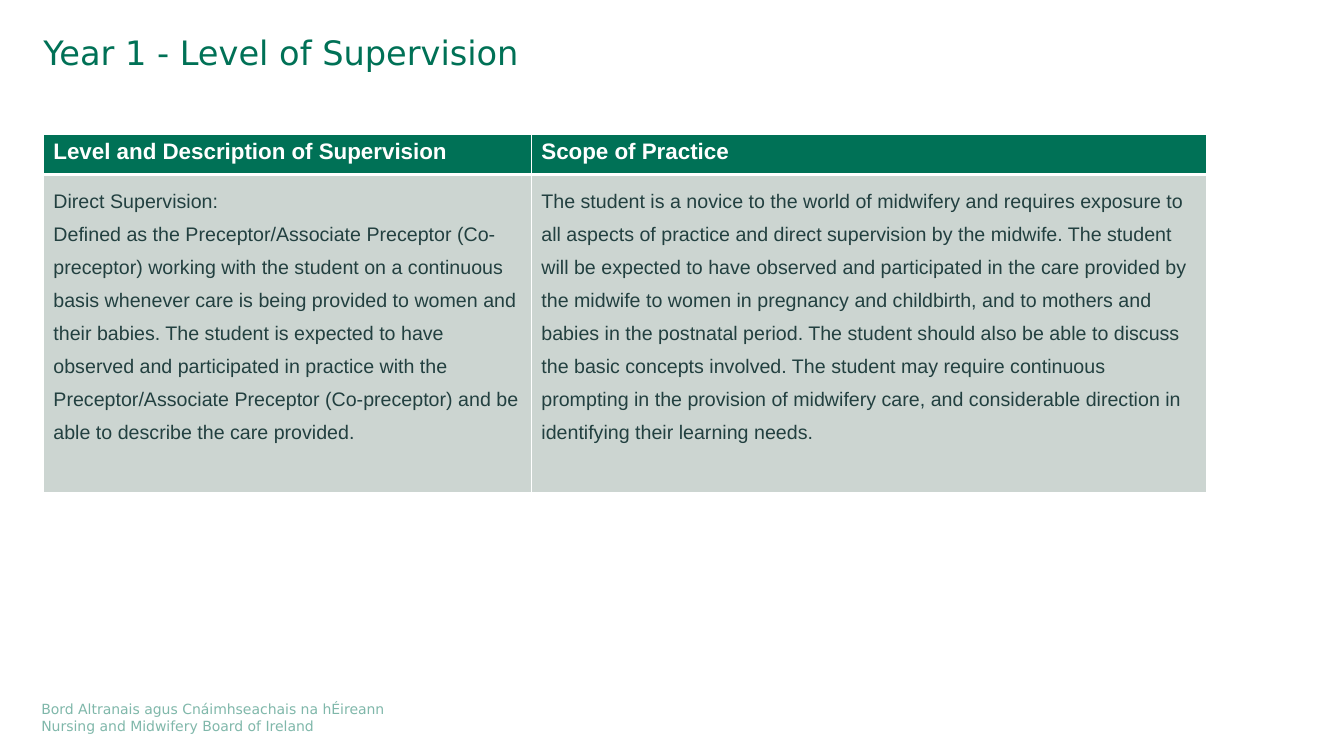
from dataclasses import dataclass

from lxml import etree
from pptx import Presentation
from pptx.dml.color import RGBColor
from pptx.enum.text import MSO_ANCHOR
from pptx.oxml.ns import qn
from pptx.slide import Slide
from pptx.table import _Cell
from pptx.text.text import TextFrame
from pptx.util import Pt

TOP = MSO_ANCHOR.TOP
MIDDLE = MSO_ANCHOR.MIDDLE
GREEN = RGBColor(0x00, 0x71, 0x56)
SLATE = RGBColor(0x22, 0x40, 0x40)
SAGE = RGBColor(0xCC, 0xD5, 0xD1)
WHITE = RGBColor(0xFF, 0xFF, 0xFF)
SCALE = 9144
COLS = (484, 670)
ROWS = (40, 316)


@dataclass(frozen=True)
class Style:
    face: str
    size: int
    color: RGBColor
    bold: bool = False
    space: float = 1.0
    alpha: int = 100


@dataclass(frozen=True)
class Label:
    left: int
    top: int
    width: int
    height: int
    style: Style
    anchor: MSO_ANCHOR
    lines: tuple[str, ...]


@dataclass(frozen=True)
class Band:
    style: Style
    fill: RGBColor
    base: int
    cells: tuple[tuple[str, ...], ...]


LABELS = (
    Label(41, 695, 439, 34, Style("DejaVu Sans", 10, GREEN, alpha=50), TOP, (
        "Bord Altranais agus Cnáimhseachais na hÉireann",
        "Nursing and Midwifery Board of Ireland",
    )),
    Label(43, 36, 1246, 52, Style("DejaVu Sans", 24, GREEN, space=0.9), TOP, (
        "Year 1 - Level of Supervision",
    )),
)

BANDS = (
    Band(Style("Arial", 16, WHITE, bold=True), GREEN, 3, (
        ("Level and Description of Supervision",),
        ("Scope of Practice",),
    )),
    Band(Style("Arial", 14, SLATE, space=1.5), SAGE, 1, (
        (
            "Direct Supervision:",
            "Defined as the Preceptor/Associate Preceptor (Co-preceptor) working "
            "with the student on a continuous basis whenever care is being provided "
            "to women and their babies. The student is expected to have observed and "
            "participated in practice with the Preceptor/Associate Preceptor "
            "(Co-preceptor) and be able to describe the care provided.",
        ),
        (
            "The student is a novice to the world of midwifery and requires exposure "
            "to all aspects of practice and direct supervision by the midwife. The "
            "student will be expected to have observed and participated in the care "
            "provided by the midwife to women in pregnancy and childbirth, and to "
            "mothers and babies in the postnatal period. The student should also be "
            "able to discuss the basic concepts involved. The student may require "
            "continuous prompting in the provision of midwifery care, and "
            "considerable direction in identifying their learning needs.",
        ),
    )),
)


def px(count: int) -> int:
    return count * SCALE


def write(frame: TextFrame, lines: tuple[str, ...], style: Style) -> None:
    frame.text = "\n".join(lines)
    for para in frame.paragraphs:
        para.line_spacing = style.space
        font = para.font
        font.name = style.face
        font.size = Pt(style.size)
        font.bold = style.bold
        font.color.rgb = style.color
        if style.alpha < 100:
            for tint in para._p.iter(qn("a:srgbClr")):
                etree.SubElement(tint, qn("a:alpha"), val=str(style.alpha * 1000))


def add_label(slide: Slide, label: Label) -> None:
    box = slide.shapes.add_textbox(
        px(label.left), px(label.top), px(label.width), px(label.height))
    frame = box.text_frame
    frame.word_wrap = True
    frame.vertical_anchor = label.anchor
    frame.margin_left = frame.margin_right = 0
    frame.margin_top = frame.margin_bottom = 0
    write(frame, label.lines, label.style)


def add_edges(cell: _Cell, base: int) -> None:
    props = cell._tc.get_or_add_tcPr()
    for side, width in (("L", 1), ("R", 1), ("T", 1), ("B", base)):
        line = etree.SubElement(props, qn(f"a:ln{side}"), w=str(Pt(width)))
        fill = etree.SubElement(line, qn("a:solidFill"))
        etree.SubElement(fill, qn("a:srgbClr"), val=str(WHITE))


def add_grid(slide: Slide) -> None:
    grid = slide.shapes.add_table(
        len(ROWS), len(COLS), px(43), px(133), px(sum(COLS)), px(sum(ROWS))).table
    for col, width in zip(grid.columns, COLS):
        col.width = px(width)
    for row, height, band in zip(grid.rows, ROWS, BANDS):
        row.height = px(height)
        for cell, lines in zip(row.cells, band.cells):
            add_edges(cell, band.base)
            cell.fill.solid()
            cell.fill.fore_color.rgb = band.fill
            write(cell.text_frame, lines, band.style)


def main() -> None:
    deck = Presentation()
    deck.slide_width = px(1333)
    deck.slide_height = px(750)
    slide = deck.slides.add_slide(deck.slide_layouts[6])
    for label in LABELS:
        add_label(slide, label)
    add_grid(slide)
    deck.save("out.pptx")


if __name__ == "__main__":
    main()
